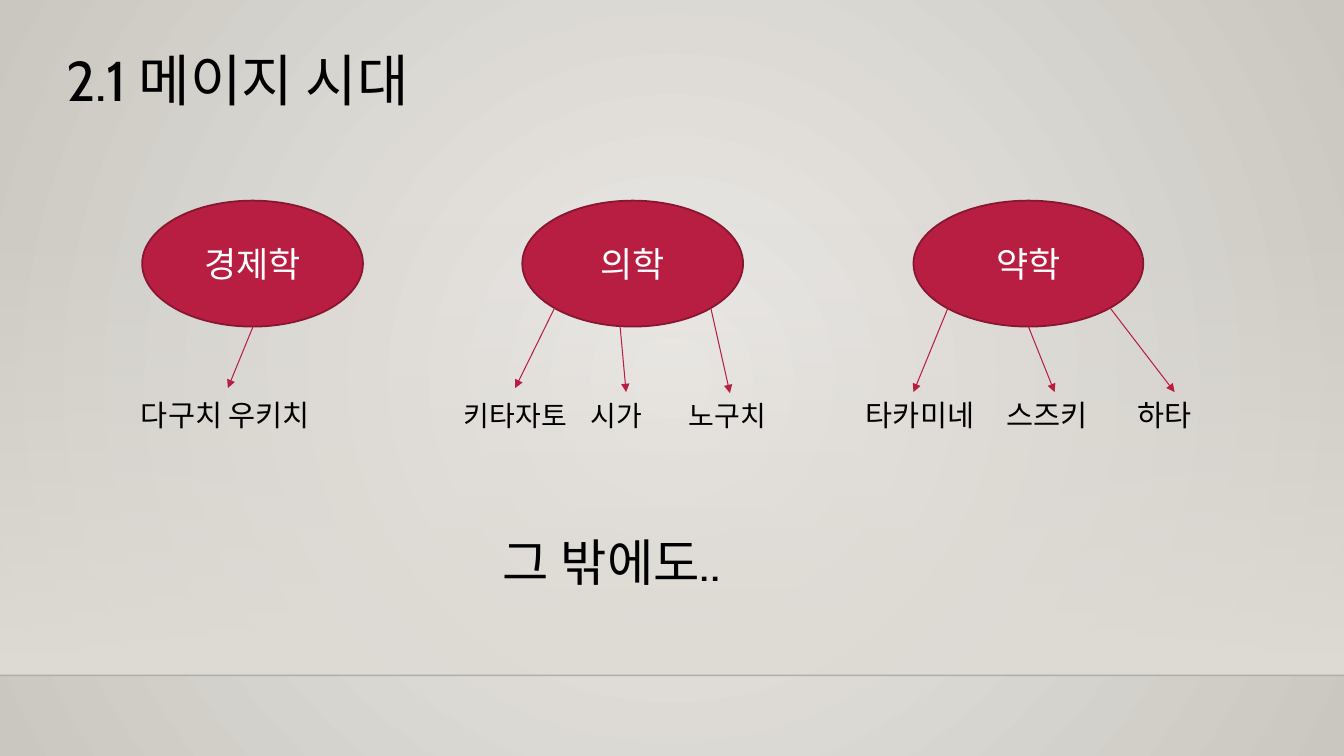
from math import sqrt

from lxml.etree import SubElement
from pptx import Presentation
from pptx.dml.color import RGBColor
from pptx.enum.shapes import MSO_CONNECTOR, MSO_SHAPE
from pptx.enum.text import MSO_ANCHOR, MSO_AUTO_SIZE, PP_ALIGN
from pptx.oxml import parse_xml
from pptx.oxml.ns import nsdecls, qn
from pptx.util import Inches, Pt

TITLE = ("2.1 메이지 시대", (0.56, 0.4, 4.06, 0.77), 40)
CLOSING = ("그 밖에도..", (4.89, 5.22, 2.58, 0.71), 36)
FIELDS = [
    {"field": "경제학", "left": 1.41, "width": 2.19,
     "arrows": [(2.51, 2.26, 3.85)],
     "scholars": ["다구치 우키치"], "tabs": [],
     "box": (1.3, 3.89, 2.15, 0.45), "size": 21},
    {"field": "의학", "left": 5.18, "width": 2.19,
     "arrows": [(5.5, 5.11, 3.85), (6.15, 6.21, 3.89), (7.05, 7.24, 3.9)],
     "scholars": ["키타자토", "시가", "노구치"], "tabs": [1.26, 2.23],
     "box": (4.5, 3.9, 3.78, 0.44), "size": 20},
    {"field": "약학", "left": 9.06, "width": 2.28,
     "arrows": [(9.4, 9.06, 3.89), (10.2, 10.46, 3.89), (11.01, 11.65, 3.89)],
     "scholars": ["타카미네", "스즈키", "하타"], "tabs": [1.39, 2.69],
     "box": (8.49, 3.89, 3.94, 0.45), "size": 21},
]
COLORS = {
    "center": "ECEAE7", "edge": "CAC7C1", "wall": "DFDBD5", "floor": "000001",
    "crimson": "B71E42", "outline": "871631", "text": "000000", "white": "FFFFFF",
}
FONT = "Cabin"
WIDTH, HEIGHT = 13.33, 7.5
OVAL_TOP, OVAL_HEIGHT = 1.99, 1.25
WALL_TOP, FLOOR = 2.21, 6.7


def rgb(name):
    return RGBColor.from_string(COLORS[name])


def set_font(paragraph, size, color):
    paragraph.font.name = FONT
    paragraph.font.size = Pt(size)
    paragraph.font.color.rgb = rgb(color)


def set_alpha(color_element, percent):
    SubElement(color_element, qn("a:alpha")).set("val", str(percent * 1000))


def set_gradient(fill, first, last):
    fill.gradient()
    for stop, color, position in zip(fill.gradient_stops, (first, last), (0, 1)):
        stop.color.rgb = rgb(color)
        stop.position = position


def add_text(slide, text, box, size, tabs=(), wrap=True):
    frame = slide.shapes.add_textbox(*map(Inches, box)).text_frame
    frame.word_wrap = wrap
    frame.auto_size = MSO_AUTO_SIZE.SHAPE_TO_FIT_TEXT
    paragraph = frame.paragraphs[0]
    paragraph.text = text
    if tabs:
        tab_list = SubElement(paragraph._p.get_or_add_pPr(), qn("a:tabLst"))
        for tab in tabs:
            SubElement(tab_list, qn("a:tab"), pos=str(Inches(tab)), algn="l")
    set_font(paragraph, size, "text")


def add_line(slide, x1, y1, x2, y2, color, width):
    line = slide.shapes.add_connector(
        MSO_CONNECTOR.STRAIGHT, *map(Inches, (x1, y1, x2, y2)))
    line.line.color.rgb = rgb(color)
    line.line.width = Pt(width)
    SubElement(line._element.spPr, qn("a:effectLst"))
    return line.line._get_or_add_ln()


def add_backdrop(slide):
    set_gradient(slide.background.fill, "center", "edge")
    gradient = slide.element.xpath(".//p:bgPr/a:gradFill")[0]
    gradient.replace(gradient.find(qn("a:lin")), parse_xml(
        f'<a:path {nsdecls("a")} path="circle">'
        '<a:fillToRect l="50000" t="50000" r="50000" b="50000"/></a:path>'))

    wall = slide.shapes.add_shape(
        MSO_SHAPE.RECTANGLE, 0, Inches(WALL_TOP), Inches(WIDTH), Inches(FLOOR - WALL_TOP))
    wall.shadow.inherit = False
    wall.line.fill.background()
    set_gradient(wall.fill, "wall", "wall")
    wall.fill.gradient_angle = 270
    set_alpha(wall._element.xpath(".//a:gs/a:srgbClr")[0], 0)

    floor = add_line(slide, 0, FLOOR, WIDTH, FLOOR, "floor", 1)
    set_alpha(floor.xpath(".//a:srgbClr")[0], 20)


def add_field(slide, item):
    left, width = item["left"], item["width"]
    oval = slide.shapes.add_shape(
        MSO_SHAPE.OVAL, *map(Inches, (left, OVAL_TOP, width, OVAL_HEIGHT)))
    oval.shadow.inherit = False
    oval.fill.solid()
    oval.fill.fore_color.rgb = rgb("crimson")
    oval.line.color.rgb = rgb("outline")
    oval.line.width = Pt(1.25)
    oval.text_frame.vertical_anchor = MSO_ANCHOR.MIDDLE
    label = oval.text_frame.paragraphs[0]
    label.text = item["field"]
    label.alignment = PP_ALIGN.CENTER
    set_font(label, 25, "white")

    for start_x, end_x, end_y in item["arrows"]:
        offset = (start_x - left) / (width / 2) - 1
        start_y = OVAL_TOP + OVAL_HEIGHT / 2 * (1 + sqrt(1 - offset ** 2))
        arrow = add_line(slide, start_x, start_y, end_x, end_y, "crimson", 0.75)
        SubElement(arrow, qn("a:tailEnd"), type="triangle")

    add_text(slide, "\t".join(item["scholars"]), item["box"], item["size"], item["tabs"])


def main():
    deck = Presentation()
    deck.slide_width, deck.slide_height = Inches(WIDTH), Inches(HEIGHT)
    slide = deck.slides.add_slide(deck.slide_layouts[6])
    add_backdrop(slide)
    add_text(slide, *TITLE)
    for item in FIELDS:
        add_field(slide, item)
    add_text(slide, *CLOSING, wrap=False)
    deck.save("out.pptx")


if __name__ == "__main__":
    main()
